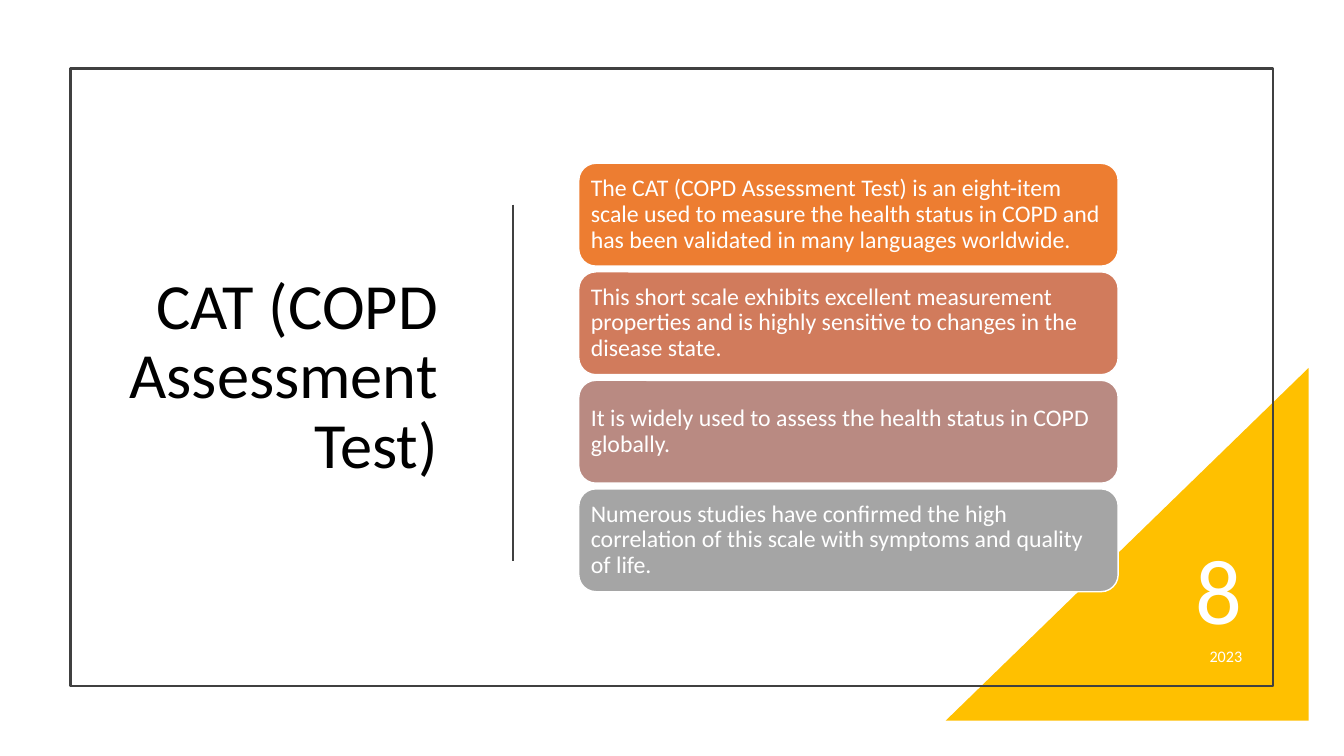
from dataclasses import dataclass
from lxml.etree import SubElement
from pptx import Presentation
from pptx.dml.color import RGBColor
from pptx.enum.shapes import MSO_CONNECTOR, MSO_SHAPE
from pptx.enum.text import MSO_ANCHOR, MSO_AUTO_SIZE, PP_ALIGN
from pptx.oxml.ns import qn
from pptx.util import Emu, Pt

SCALE = 9144  # EMU per px, 100 px to the inch


@dataclass(frozen=True)
class Theme:
    font: str = "Calibri"
    ink: str = "000000"
    line: str = "404040"
    light: str = "FFFFFF"
    accent: str = "FFC000"
    cards: tuple = ("ED7D31", "D17B5C", "B98A82", "A5A5A5")
    title: float = 46
    body: float = 17
    number: float = 66
    date: float = 11.5
    rule: float = 1.5
    edge: float = 1


THEME = Theme()
POINTS = (
    "The CAT (COPD Assessment Test) is an eight-item scale used to measure the health "
    "status in COPD and has been validated in many languages worldwide.",
    "This short scale exhibits excellent measurement properties and is highly sensitive "
    "to changes in the disease state.",
    "It is widely used to assess the health status in COPD globally.",
    "Numerous studies have confirmed the high correlation of this scale with symptoms "
    "and quality of life.",
)


def px(*sizes):
    return [Emu(round(size * SCALE)) for size in sizes]


def rgb(color):
    return RGBColor.from_string(color)


def write(shape, text, size, color, align, spacing=0.9, after=0):
    frame = shape.text_frame
    frame.text = text
    frame.word_wrap = True
    frame.auto_size = MSO_AUTO_SIZE.NONE
    frame.vertical_anchor = MSO_ANCHOR.MIDDLE
    para = frame.paragraphs[0]
    para.alignment = align
    para.line_spacing = spacing
    para.space_after = Pt(after)
    font = para.runs[0].font
    font.name, font.size = THEME.font, Pt(size)
    font.color.rgb = rgb(color)


def block(slide, kind, box, fill=None, line=None, width=1):
    shape = slide.shapes.add_shape(kind, *px(*box))
    shape.shadow.inherit = False
    if fill:
        shape.fill.solid()
        shape.fill.fore_color.rgb = rgb(fill)
    else:
        shape.fill.background()
    if line:
        shape.line.color.rgb = rgb(line)
        shape.line.width = Pt(width)
    else:
        shape.line.fill.background()
    return shape


# Corner triangle and outer frame
def backdrop(slide, box):
    left, top, width, height = box
    corner = block(slide, MSO_SHAPE.RIGHT_TRIANGLE,
                   (left + 868, top + 297, 360, 350), THEME.accent)
    corner._element.spPr.find(qn("a:xfrm")).set("flipH", "1")
    block(slide, MSO_SHAPE.RECTANGLE, box, line=THEME.line, width=THEME.rule)


# Title with the vertical rule on its right
def heading(slide, box, text):
    left, top, width, height = box
    title = slide.shapes.title
    title.left, title.top, title.width, title.height = px(*box)
    write(title, text, THEME.title, THEME.ink, PP_ALIGN.RIGHT)
    x = left + width + 65
    rule = slide.shapes.add_connector(
        MSO_CONNECTOR.STRAIGHT, *px(x, top + 73, x, top + 427))
    rule.line.color.rgb = rgb(THEME.line)
    rule.line.width = Pt(THEME.rule)
    SubElement(rule._element.spPr, qn("a:effectLst"))


# Slide number above the year
def footer(slide, box, number, year):
    left, top, width, height = box
    parts = (
        (year, (left, top + height - 40, width, 40), THEME.date, 1),
        (number, (left + 54, top, width - 54, 110), THEME.number, 0.9),
    )
    for text, area, size, spacing in parts:
        label = slide.shapes.add_textbox(*px(*area))
        write(label, text, size, THEME.light, PP_ALIGN.RIGHT, spacing, 6)


# Evenly spaced column of cards
def stack(slide, box, points):
    left, top, width, height = box
    tall = 102
    step = (height - tall) / (len(points) - 1)
    for i, (text, fill) in enumerate(zip(points, THEME.cards)):
        card = block(slide, MSO_SHAPE.ROUNDED_RECTANGLE,
                     (left, top + i * step, width, tall), fill, THEME.light, THEME.edge)
        write(card, text, THEME.body, THEME.light, PP_ALIGN.LEFT)
        frame = card.text_frame
        frame.margin_left, frame.margin_top, frame.margin_right, frame.margin_bottom = px(7, 7, 7, 7)


def main():
    deck = Presentation()
    deck.slide_width, deck.slide_height = px(1333, 750)
    slide = deck.slides.add_slide(deck.slide_layouts[5])
    backdrop(slide, (70, 68, 1193, 613))
    heading(slide, (110, 130, 334, 490), "CAT (COPD Assessment Test)")
    footer(slide, (1005, 535, 237, 136), "8", "2023")
    stack(slide, (574, 162, 535, 425), POINTS)
    deck.save("out.pptx")


if __name__ == "__main__":
    main()
